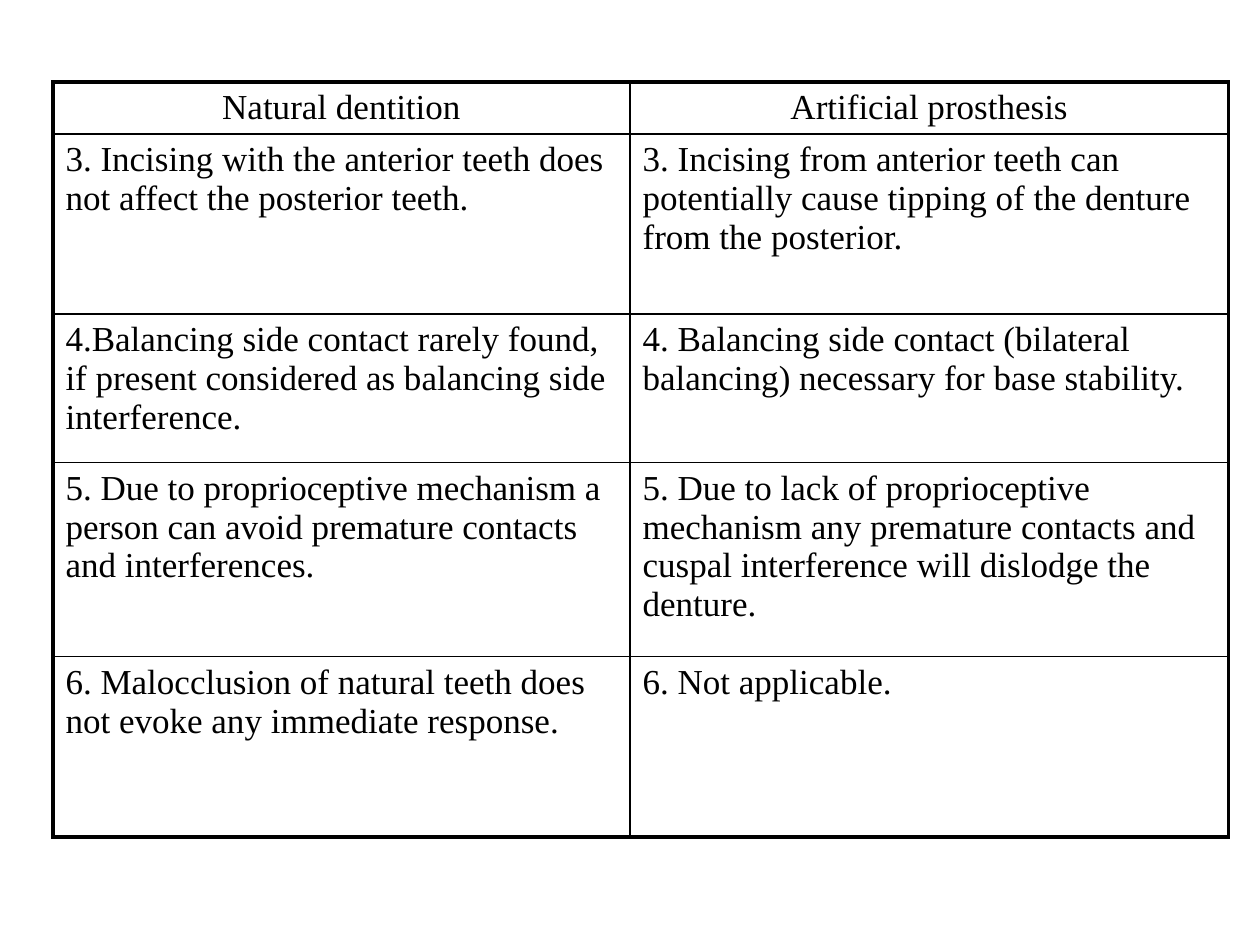
"""Build a slide comparing natural dentition with an artificial prosthesis."""
from typing import NamedTuple

from lxml.etree import SubElement
from pptx import Presentation
from pptx.dml.color import RGBColor
from pptx.enum.text import PP_ALIGN as Align
from pptx.oxml.ns import qn
from pptx.util import Inches, Pt

COLORS = {"ink": "000000", "paper": "FFFFFF"}
FONT = "Times New Roman"
SLIDE_WIDTH, SLIDE_HEIGHT = Inches(10), Inches(7.5)
LEFT_SHARE, TOP_SHARE = 0.042, 0.087
COLUMN_WIDTHS = (4.58, 4.75)
ROW_HEIGHTS = (0.41, 1.43, 1.18, 1.54, 1.43)
OUTER_LINE, INNER_LINE = 2.25, 1


class Comparison(NamedTuple):
    natural: str
    artificial: str


COMPARISONS = (
    Comparison("Natural dentition", "Artificial prosthesis"),
    Comparison(
        "3. Incising with the anterior teeth does not affect the posterior teeth.",
        "3. Incising from anterior teeth can potentially cause tipping of the denture from the posterior.",
    ),
    Comparison(
        "4.Balancing side contact rarely found, if present considered as balancing side interference.",
        "4. Balancing side contact (bilateral balancing) necessary for base stability.",
    ),
    Comparison(
        "5. Due to proprioceptive mechanism a person can avoid premature contacts and interferences.",
        "5. Due to lack of proprioceptive mechanism any premature contacts and cuspal interference "
        "will dislodge the denture.",
    ),
    Comparison(
        "6. Malocclusion of natural teeth does not evoke any immediate response.",
        "6. Not applicable.",
    ),
)


def write(frame, text: str, *, size: float = 20, color: str = "ink", align=Align.LEFT) -> None:
    paragraph = frame.paragraphs[0]
    paragraph.alignment = align
    run = paragraph.add_run()
    run.text = text
    run.font.name = FONT
    run.font.size = Pt(size)
    run.font.color.rgb = RGBColor.from_string(COLORS[color])


def draw_borders(cell, row: int, column: int) -> None:
    outer_edges = {
        "a:lnL": column == 0,
        "a:lnR": column == len(COLUMN_WIDTHS) - 1,
        "a:lnT": row == 0,
        "a:lnB": row == len(ROW_HEIGHTS) - 1,
    }
    properties = cell._tc.get_or_add_tcPr()
    for edge, is_outer in outer_edges.items():
        width = Pt(OUTER_LINE if is_outer else INNER_LINE)
        line = SubElement(properties, qn(edge), w=str(int(width)))
        fill = SubElement(line, qn("a:solidFill"))
        SubElement(fill, qn("a:srgbClr"), val=COLORS["ink"])


def draw_comparisons(slide, comparisons: tuple[Comparison, ...]) -> None:
    table = slide.shapes.add_table(
        len(ROW_HEIGHTS),
        len(COLUMN_WIDTHS),
        int(SLIDE_WIDTH * LEFT_SHARE),
        int(SLIDE_HEIGHT * TOP_SHARE),
        Inches(sum(COLUMN_WIDTHS)),
        Inches(sum(ROW_HEIGHTS)),
    ).table
    table.first_row = table.horz_banding = False
    for column, width in zip(table.columns, COLUMN_WIDTHS):
        column.width = Inches(width)
    for row, height in zip(table.rows, ROW_HEIGHTS):
        row.height = Inches(height)
    for row, comparison in enumerate(comparisons):
        for column, text in enumerate(comparison):
            cell = table.cell(row, column)
            write(cell.text_frame, text, align=Align.LEFT if row else Align.CENTER)
            draw_borders(cell, row, column)
            cell.fill.solid()
            cell.fill.fore_color.rgb = RGBColor.from_string(COLORS["paper"])


def main() -> None:
    deck = Presentation()
    deck.slide_width, deck.slide_height = SLIDE_WIDTH, SLIDE_HEIGHT
    slide = deck.slides.add_slide(deck.slide_layouts[6])
    draw_comparisons(slide, COMPARISONS)
    deck.save("out.pptx")


if __name__ == "__main__":
    main()
